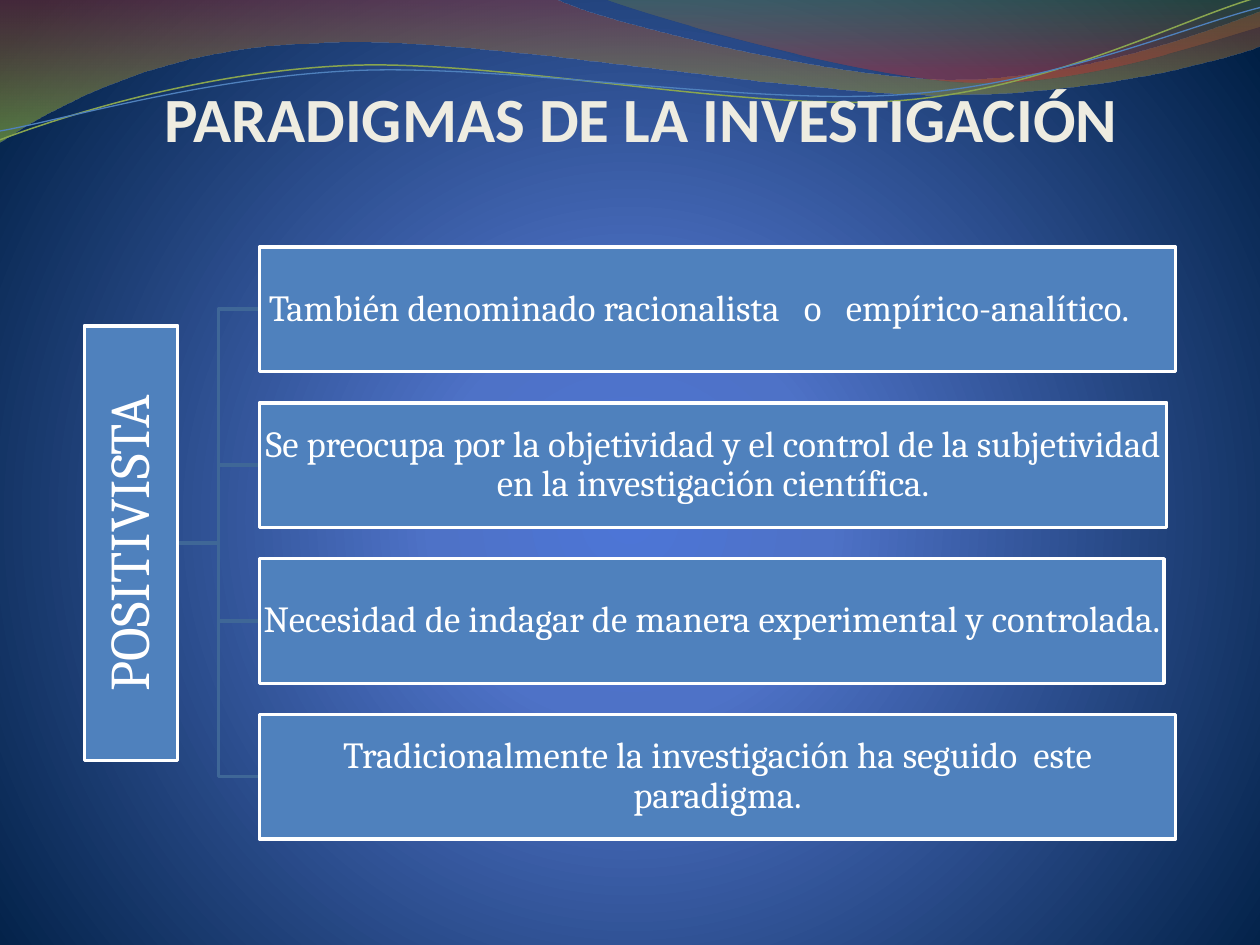
from lxml.etree import SubElement
from pptx import Presentation
from pptx.dml.color import RGBColor
from pptx.enum.shapes import MSO_SHAPE
from pptx.enum.text import MSO_ANCHOR, PP_ALIGN
from pptx.oxml.ns import qn
from pptx.util import Inches, Pt

WHITE, BLUE, LINK, CREAM = "FFFFFF", "4F81BD", "3F6797", "EEECE1"

# Each outline: start point, then segments of one point (line) or three (Bézier curve).
LEFT_WAVE = [(0, 0), [(4.4, -0.01)],
             [(4.76, 0.17), (6.64, 0.63), (7.58, 0.63)],
             [(8.53, 0.63), (9.58, 0.26), (10, 0.09)], [(10.01, 0.36)],
             [(9.83, 0.44), (8.7, 0.76), (7.46, 0.75)],
             [(6.22, 0.75), (3.82, 0.28), (2.57, 0.34)],
             [(1.29, 0.36), (0.46, 0.83), (-0.01, 1.13)]]
RIGHT_WAVE = [(4.79, -0.01), [(5.09, 0.11), (6.82, 0.62), (7.69, 0.65)],
              [(8.56, 0.69), (9.61, 0.32), (10, 0.21)], [(10, 0)]]
GREEN_LINE = [(0, 1.11), [(0.48, 0.93), (1.58, 0.57), (2.77, 0.52)],
              [(3.95, 0.47), (5.93, 0.89), (7.13, 0.8)],
              [(8.33, 0.71), (9.38, 0.15), (9.98, -0.02)]]
BLUE_LINE = [(0, 1.04), [(0.47, 0.96), (1.64, 0.61), (2.83, 0.56)],
             [(4.03, 0.51), (5.97, 0.84), (7.17, 0.75)],
             [(8.36, 0.67), (9.41, 0.21), (10, 0.06)]]

# Text, box width, alignment
STATEMENTS = [
    (" También denominado racionalista   o   empírico-analítico.", 7.27, PP_ALIGN.LEFT),
    ("Se preocupa por la objetividad y el control de la subjetividad "
     "en la investigación científica.", 7.2, PP_ALIGN.CENTER),
    ("Necesidad de indagar de manera experimental y controlada.", 7.18, PP_ALIGN.CENTER),
    ("Tradicionalmente la investigación ha seguido  este paradigma.", 7.27, PP_ALIGN.CENTER),
]


def color(value):
    return RGBColor.from_string(value)


def set_gradient(fill, owner, stops, center=None):
    """Fill with (position, colour, opacity) stops, downward or round a centre rectangle."""
    fill.gradient()
    gradient = next(owner.iter(qn("a:gradFill")))
    for child in list(gradient):
        gradient.remove(child)
    stop_list = SubElement(gradient, qn("a:gsLst"))
    for position, value, opacity in stops:
        stop = SubElement(stop_list, qn("a:gs"), pos=str(position * 1000))
        tint = SubElement(stop, qn("a:srgbClr"), val=value)
        if opacity < 100:
            SubElement(tint, qn("a:alpha"), val=str(opacity * 1000))
    if center:
        shade = SubElement(gradient, qn("a:path"))
        shade.set("path", "circle")
        sides = {side: str(share * 1000) for side, share in zip("ltrb", center)}
        SubElement(shade, qn("a:fillToRect"), **sides)
    else:
        SubElement(gradient, qn("a:lin"), ang="5400000", scaled="0")


def add_outline(page, outline, close=False):
    """Draw an outline, merging each three-point segment into one Bézier curve."""
    start, *segments = outline
    points = [(Inches(x), Inches(y)) for segment in segments for x, y in segment]
    builder = page.shapes.build_freeform(Inches(start[0]), Inches(start[1]))
    builder.add_line_segments(points, close=close)
    shape = builder.convert_to_shape()
    steps = shape.element.iter(qn("a:lnTo"))
    for segment, group in [(s, [next(steps) for _ in s]) for s in segments]:
        if len(segment) == 3:
            curve = group[0].makeelement(qn("a:cubicBezTo"))
            group[0].addprevious(curve)
            for step in group:
                curve.append(step[0])
                step.getparent().remove(step)
    shape.shadow.inherit = False
    shape.fill.background()
    shape.line.fill.background()
    return shape


def set_line(shape, value, width):
    shape.line.color.rgb = color(value)
    shape.line.width = Pt(width)


def write(shape, text, size, font, value, align, inset, bold=False):
    frame = shape.text_frame
    frame.word_wrap = True
    frame.margin_left = frame.margin_right = Inches(inset)
    frame.margin_top = frame.margin_bottom = Inches(inset)
    frame.vertical_anchor = MSO_ANCHOR.MIDDLE
    para = frame.paragraphs[0]
    para.alignment = align
    span = para.add_run()
    span.text = text
    span.font.size = Pt(size)
    span.font.name = font
    span.font.bold = bold
    span.font.color.rgb = color(value)
    return frame


def add_backdrop(page):
    set_gradient(page.background.fill, page.element,
                 [(0, "4D75D6", 100), (25, "4E72C7", 100), (100, "001F44", 100)],
                 center=(10, 110, 10, 100))
    for outline, stops in ((LEFT_WAVE, [(0, "973330", 45), (100, "95C238", 55)]),
                           (RIGHT_WAVE, [(0, "769537", 30), (80, "BE3330", 45)])):
        wave = add_outline(page, outline, close=True)
        set_gradient(wave.fill, wave.element, stops)
    for outline, value, width in ((GREEN_LINE, "89A54F", 0.85), (BLUE_LINE, BLUE, 0.75)):
        set_line(add_outline(page, outline), value, width)


def add_title(page, left, top, width, height):
    box = page.shapes.add_textbox(Inches(left), Inches(top), Inches(width), Inches(height))
    frame = write(box, "PARADIGMAS DE LA INVESTIGACIÓN", 36, "Calibri", CREAM,
                  PP_ALIGN.CENTER, 0, bold=True)
    frame.margin_top = Inches(0.05)
    frame.vertical_anchor = MSO_ANCHOR.BOTTOM


def add_node(page, left, top, width, height, text, size, align, inset):
    box = page.shapes.add_shape(MSO_SHAPE.RECTANGLE, Inches(left), Inches(top),
                                Inches(width), Inches(height))
    box.shadow.inherit = False
    box.fill.solid()
    box.fill.fore_color.rgb = color(BLUE)
    set_line(box, WHITE, 2)
    frame = write(box, text, size, "Cambria", WHITE, align, inset)
    frame.paragraphs[0].line_spacing = 0.9
    return box


def add_hierarchy(page, left, top, height):
    """Vertical root label, elbow links and one statement per row."""
    rows = len(STATEMENTS)
    row_height = height / (rows + 0.25 * (rows - 1))
    tops = [top + 1.25 * row_height * row for row in range(rows)]
    middle = top + height / 2
    root_length, root_width, gap = 3.45, 0.74, 0.65
    root_right = left + root_width
    row_left = root_right + gap

    for row_top in reversed(tops):
        target = row_top + row_height / 2
        bend = root_right + gap / 2
        link = add_outline(page, [(root_right, middle), [(bend, middle)],
                                  [(bend, target)], [(row_left, target)]])
        set_line(link, LINK, 2)

    root = add_node(page, left + (root_width - root_length) / 2, middle - root_width / 2,
                    root_length, root_width, "POSITIVISTA", 32, PP_ALIGN.CENTER, 0.02)
    root.rotation = 270
    for row_top, (text, width, align) in zip(tops, STATEMENTS):
        add_node(page, row_left, row_top, width, row_height, text, 21, align, 0.01)


def main():
    deck = Presentation()
    deck.slide_width, deck.slide_height = Inches(10), Inches(7.5)
    page = deck.slides.add_slide(deck.slide_layouts[6])
    add_backdrop(page)
    add_title(page, 0.59, 0.29, 9, 0.94)
    add_hierarchy(page, 0.67, 1.96, 4.7)
    deck.save("out.pptx")


if __name__ == "__main__":
    main()
